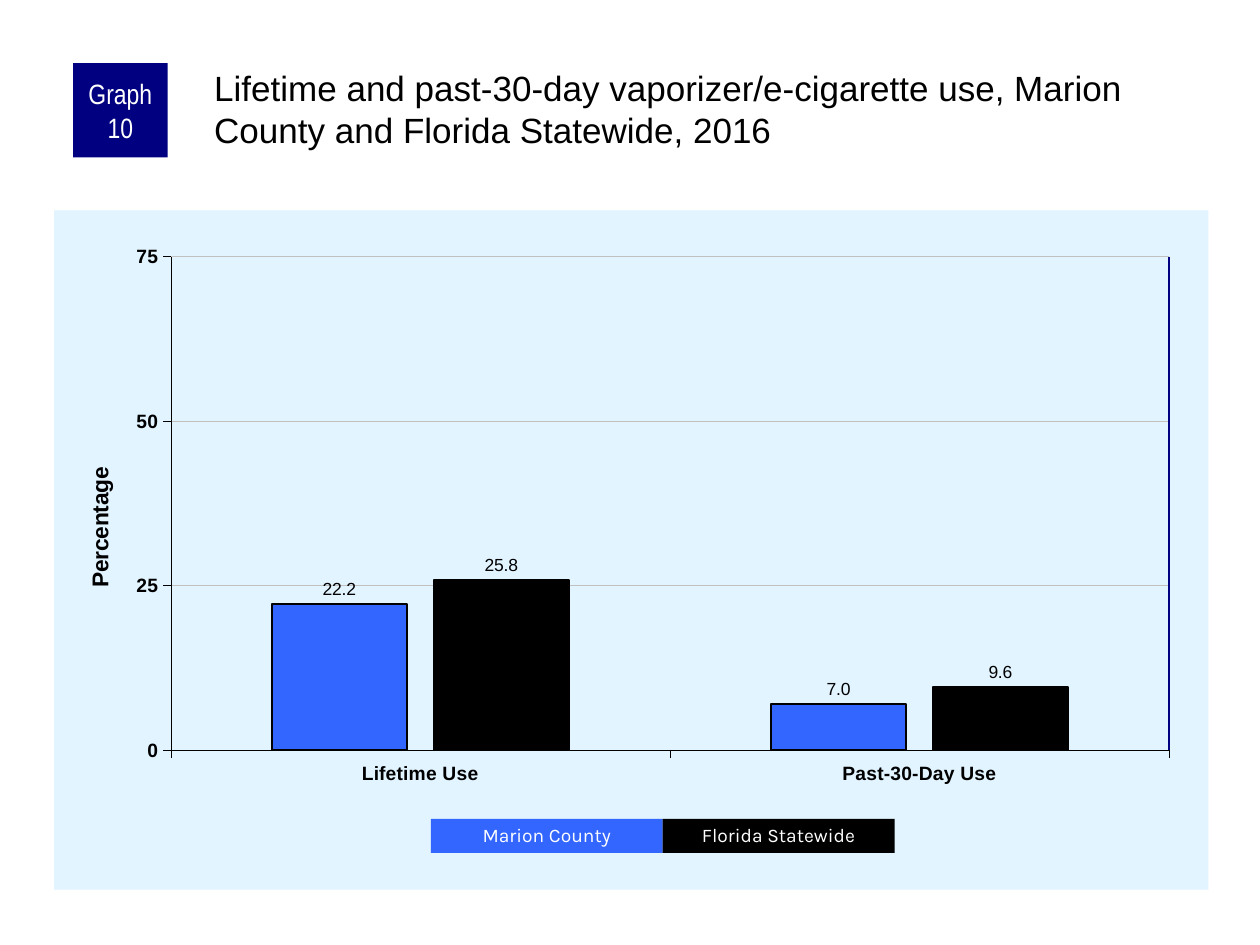
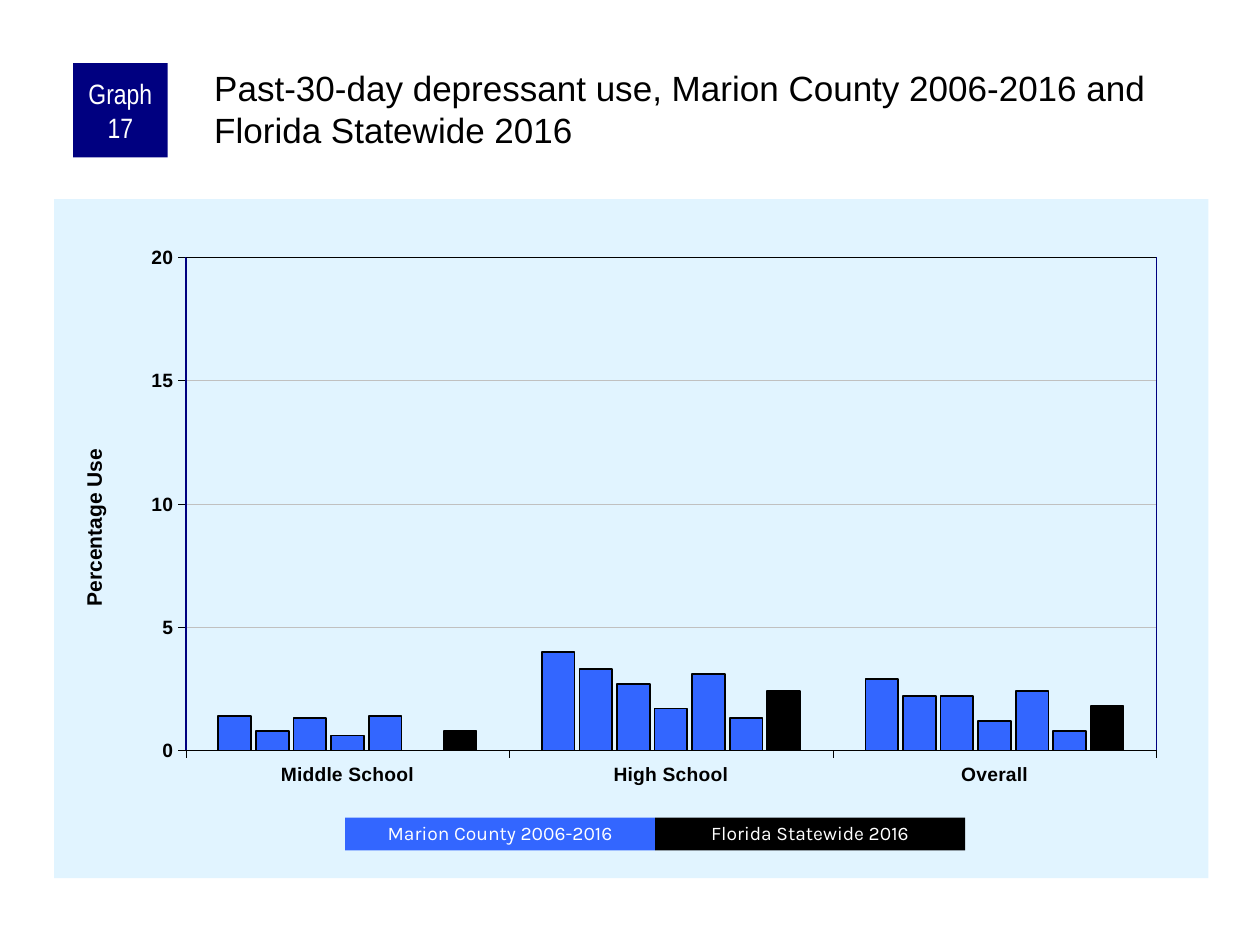
from dataclasses import dataclass

from lxml import etree
from pptx import Presentation
from pptx.chart.data import CategoryChartData
from pptx.dml.color import RGBColor
from pptx.enum import chart as charts, shapes, text
from pptx.oxml import parse_xml
from pptx.oxml.ns import nsdecls, qn
from pptx.util import Inches, Pt

# Shared look
COLOURS = {
    "text": "000000",
    "light": "FFFFFF",
    "badge": "000080",
    "panel": "E1F4FF",
    "grid": "C0C0C0",
    "county": "3366FF",
    "state": "000000",
}
BODY_FONT, BADGE_FONT, KEY_FONT = "Arial", "Arial Narrow", "Karla"
CHART_LEFT, CHART_WIDTH, CHART_HEIGHT = 0.43, 9.16, 5.39


@dataclass(frozen=True)
class Legend:
    left: float
    top: float
    width: float
    height: float
    labels: tuple[str, str]


@dataclass(frozen=True)
class Graph:
    number: int
    title: str
    top: float
    plot: tuple[float, float, float, float]  # fractions of the chart: x, y, w, h
    axis_title: str
    axis_title_size: float
    axis_title_at: tuple[float, float]
    maximum: int
    step: int
    gap: int
    overlap: int
    categories: tuple[str, ...]
    county: tuple[tuple[float, ...], ...]  # one row for each survey year
    state: tuple[float, ...]
    legend: Legend
    edges: dict[str, str]  # plot edge -> colour name
    labelled: bool = False


GRAPHS = (
    Graph(
        number=10,
        title="Lifetime and past-30-day vaporizer/e-cigarette use, "
              "Marion County and Florida Statewide, 2016",
        top=1.67, plot=(0.101, 0.068, 0.865, 0.727),
        axis_title="Percentage", axis_title_size=13, axis_title_at=(0.024, 0.372),
        maximum=75, step=25, gap=150, overlap=-20,
        categories=("Lifetime Use", "Past-30-Day Use"),
        county=((22.2, 7.0),), state=(25.8, 9.6),
        legend=Legend(3.42, 6.5, 1.84, 0.27, ("Marion County", "Florida Statewide")),
        edges={"right": "badge"}, labelled=True,
    ),
    Graph(
        number=17,
        title="Past-30-day depressant use, Marion County 2006-2016 "
              "and Florida Statewide 2016",
        top=1.58, plot=(0.114, 0.086, 0.841, 0.726),
        axis_title="Percentage Use", axis_title_size=12, axis_title_at=(0.02, 0.362),
        maximum=20, step=5, gap=200, overlap=-15,
        categories=("Middle School", "High School", "Overall"),
        county=((1.4, 4.0, 2.9), (0.8, 3.3, 2.2), (1.3, 2.7, 2.2),
                (0.6, 1.7, 1.2), (1.4, 3.1, 2.4), (0, 1.3, 0.8)),
        state=(0.8, 2.4, 1.8),
        legend=Legend(2.74, 6.49, 2.46, 0.26,
                      ("Marion County 2006-2016", "Florida Statewide 2016")),
        edges={"left": "badge", "right": "badge", "top": "text"},
    ),
)


# Formatting helpers
def colour(name: str) -> RGBColor:
    return RGBColor.from_string(COLOURS[name])


def style_font(font, size: float, name: str = "text", face: str = BODY_FONT,
               bold: bool = False) -> None:
    font.size, font.name, font.bold = Pt(size), face, bold
    font.color.rgb = colour(name)


def style_line(line, name: str, width: float) -> None:
    line.color.rgb = colour(name)
    line.width = Pt(width)


def set_layout(parent, **values: float) -> None:
    """Fix the position of a chart part, as fractions of the chart."""
    edges = "".join(f'<c:{key}Mode val="edge"/>' for key in ("x", "y"))
    places = "".join(f'<c:{key} val="{value}"/>' for key, value in values.items())
    target = '<c:layoutTarget val="inner"/>' if "w" in values else ""
    layout = parse_xml(f'<c:layout {nsdecls("c")}><c:manualLayout>{target}{edges}'
                       f'{places}</c:manualLayout></c:layout>')
    old = parent.find(qn("c:layout"))
    if old is None:
        parent.insert(0, layout)
    else:
        parent.replace(old, layout)


# Title, badge and legend
def add_title(page, title: str) -> None:
    box = page.shapes.title
    box.left, box.top = Inches(1.67), Inches(0.5)
    box.width, box.height = Inches(7.92), Inches(0.83)
    frame = box.text_frame
    frame.word_wrap, frame.auto_size = True, text.MSO_AUTO_SIZE.NONE
    frame.vertical_anchor = text.MSO_ANCHOR.TOP
    frame.margin_left = frame.margin_top = Inches(0.03)
    frame.margin_right = frame.margin_bottom = 0
    para = frame.paragraphs[0]
    para.alignment = text.PP_ALIGN.LEFT
    span = para.add_run()
    span.text = title
    style_font(span.font, 20)


def add_block(page, left: float, top: float, width: float, height: float,
              fill: str, words: str, size: float, face: str,
              spacing: float = 1.0) -> None:
    box = page.shapes.add_shape(shapes.MSO_SHAPE.RECTANGLE, Inches(left),
                                Inches(top), Inches(width), Inches(height))
    box.shadow.inherit = False
    box.fill.solid()
    box.fill.fore_color.rgb = colour(fill)
    box.line.fill.background()
    frame = box.text_frame
    frame.word_wrap = True
    frame.vertical_anchor = text.MSO_ANCHOR.MIDDLE
    frame.margin_left = frame.margin_right = Inches(0.05)
    frame.margin_top = frame.margin_bottom = 0
    para = frame.paragraphs[0]
    para.alignment, para.line_spacing = text.PP_ALIGN.CENTER, spacing
    span = para.add_run()
    span.text = words
    style_font(span.font, size, "light", face)


def add_legend(page, legend: Legend) -> None:
    for index, (fill, label) in enumerate(zip(("county", "state"), legend.labels)):
        add_block(page, legend.left + index * legend.width, legend.top,
                  legend.width, legend.height, fill, label, 11, KEY_FONT, 0.9)


# Chart
def style_axis(axis) -> None:
    axis.major_tick_mark = charts.XL_TICK_MARK.OUTSIDE
    axis.minor_tick_mark = charts.XL_TICK_MARK.NONE
    style_font(axis.tick_labels.font, 11, bold=True)
    style_line(axis.format.line, "text", 0.25)


def style_value_axis(axis, graph: Graph) -> None:
    axis.minimum_scale, axis.maximum_scale = 0, graph.maximum
    axis.major_unit = graph.step
    axis.has_major_gridlines = True
    style_line(axis.major_gridlines.format.line, "grid", 0.25)
    title = axis.axis_title
    span = title.text_frame.paragraphs[0].add_run()
    span.text = graph.axis_title
    style_font(span.font, graph.axis_title_size, bold=True)
    body = next(title.element.iter(qn("a:bodyPr")))
    body.set("rot", "-5400000")
    body.set("vert", "horz")
    set_layout(title.element, **dict(zip("xy", graph.axis_title_at)))


def add_graph(page, graph: Graph) -> None:
    data = CategoryChartData(number_format="0.0")
    data.categories = graph.categories
    for number, values in enumerate((*graph.county, graph.state), start=1):
        data.add_series(f"Series {number}", values)
    chart = page.shapes.add_chart(
        charts.XL_CHART_TYPE.COLUMN_CLUSTERED, Inches(CHART_LEFT), Inches(graph.top),
        Inches(CHART_WIDTH), Inches(CHART_HEIGHT), data).chart
    chart.has_title = chart.has_legend = False
    style_font(chart.font, 10)

    # Panel colour and plot position
    body = chart.element.find(qn("c:chart"))
    body.addnext(parse_xml(
        f'<c:spPr {nsdecls("c", "a")}><a:solidFill><a:srgbClr val="{COLOURS["panel"]}"/>'
        '</a:solidFill><a:ln><a:noFill/></a:ln></c:spPr>'))
    set_layout(body.find(qn("c:plotArea")), **dict(zip("xywh", graph.plot)))

    # Axes and columns
    for axis in (chart.category_axis, chart.value_axis):
        style_axis(axis)
    chart.value_axis.tick_labels.number_format = "0"
    chart.value_axis.tick_labels.number_format_is_linked = False
    style_value_axis(chart.value_axis, graph)
    plot = chart.plots[0]
    plot.gap_width, plot.overlap = graph.gap, graph.overlap
    plot.vary_by_categories = False
    for index, series in enumerate(plot.series):
        series.format.fill.solid()
        series.format.fill.fore_color.rgb = colour(
            "county" if index < len(graph.county) else "state")
        series.invert_if_negative = False
        style_line(series.format.line, "text", 1)
    if graph.labelled:
        plot.has_data_labels = True
        labels = plot.data_labels
        labels.show_value = True
        labels.number_format, labels.number_format_is_linked = "0.0", False
        labels.position = charts.XL_LABEL_POSITION.OUTSIDE_END
        style_font(labels.font, 10)


def add_plot_edges(page, graph: Graph) -> None:
    x, y, width, height = graph.plot
    left, top = CHART_LEFT + x * CHART_WIDTH, graph.top + y * CHART_HEIGHT
    right, bottom = left + width * CHART_WIDTH, top + height * CHART_HEIGHT
    ends = {"left": (left, top, left, bottom), "right": (right, top, right, bottom),
            "top": (left, top, right, top)}
    for edge, name in graph.edges.items():
        line = page.shapes.add_connector(shapes.MSO_CONNECTOR.STRAIGHT,
                                         *(Inches(value) for value in ends[edge]))
        style_line(line.line, name, 1)
        etree.SubElement(line.element.spPr, qn("a:effectLst"))


def main() -> None:
    deck = Presentation()
    deck.slide_width, deck.slide_height = Inches(10), Inches(7.5)
    for graph in GRAPHS:
        page = deck.slides.add_slide(deck.slide_layouts[5])
        add_graph(page, graph)
        add_plot_edges(page, graph)
        add_block(page, 0.58, 0.5, 0.75, 0.75, "badge", f"Graph {graph.number}",
                  16, BADGE_FONT)
        add_title(page, graph.title)
        add_legend(page, graph.legend)
    deck.save("out.pptx")


if __name__ == "__main__":
    main()
